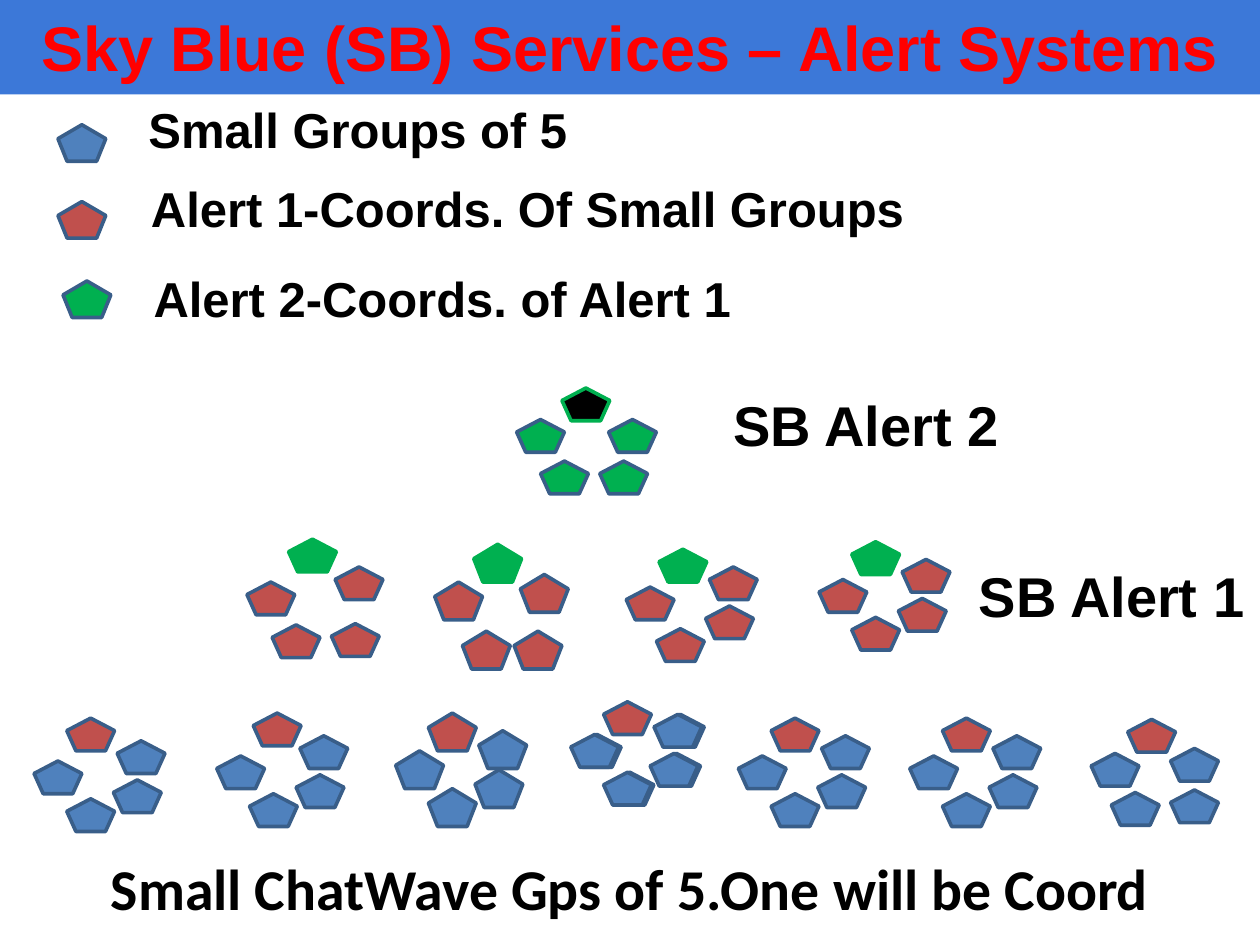
import pptx
import pptx.util
import pptx.dml.color
import pptx.enum.shapes
import pptx.enum.text

Inches = pptx.util.Inches
BLUE, RED, GREEN, BLACK = "4F81BD", "C0504D", "00B050", "000000"
EDGE, BAND, TITLE = "395E89", "3C78D8", "FF0000"
WIDE = 0.38
RING = [(-0.26, 0.3), (0.4, 0.14), (0, 0.6), (0.37, 0.45)]


def paint(color, code):
    """Set a solid colour from a hex string."""
    color.rgb = pptx.dml.color.RGBColor.from_string(code)


def style(frame, text, size, code, face="Arial", align=None):
    """Write one bold paragraph into a text frame."""
    frame.word_wrap = True
    para = frame.paragraphs[0]
    para.text = text
    para.alignment = align
    para.font.size = pptx.util.Pt(size)
    para.font.name = face
    para.font.bold = True
    paint(para.font.color, code)


def label(slide, box, text, size, **more):
    """Add a text box."""
    shape = slide.shapes.add_textbox(*map(Inches, box))
    style(shape.text_frame, text, size, BLACK, **more)


def member(slide, left, top, tall, fill, edge=EDGE):
    """Add one pentagon."""
    kind = pptx.enum.shapes.MSO_SHAPE.REGULAR_PENTAGON
    shape = slide.shapes.add_shape(
        kind, Inches(left), Inches(top), Inches(WIDE), Inches(tall))
    shape.shadow.inherit = False
    shape.fill.solid()
    paint(shape.fill.fore_color, fill)
    paint(shape.line.color, edge)
    shape.line.width = pptx.util.Pt(2.08)


def circle(slide, left, top, spots, fill, tall):
    """Place the members of a group around its leader's corner."""
    for right, down in spots:
        member(slide, left + right, top + down, tall, fill)


def team(slide, left, top, fills, spots=RING, tall=0.26, edge=EDGE):
    """Place a leader and the members around it."""
    member(slide, left, top, tall, fills[0], edge)
    circle(slide, left, top, spots, fills[1], tall)


def shift(right, down):
    """Return the ring of spots moved by an offset."""
    return [(x + right, y + down) for x, y in RING]


def header(slide, box):
    """Format the title as a full-width band."""
    title = slide.shapes.title
    title.left, title.top, title.width, title.height = map(Inches, box)
    title.fill.solid()
    paint(title.fill.fore_color, BAND)
    title.text_frame.vertical_anchor = pptx.enum.text.MSO_ANCHOR.MIDDLE
    style(title.text_frame, "Sky Blue (SB) Services – Alert Systems", 36,
          TITLE, align=pptx.enum.text.PP_ALIGN.CENTER)


def legend(slide, left, top):
    """Explain the three colours."""
    rows = [
        (0, 0.25, BLUE, 0.62, 0, 4.74, 0.66, "Small Groups of 5"),
        (0, 0.86, RED, 0.64, 0.63, 7.14, 0.59,
         "Alert 1-Coords. Of Small Groups"),
        (0.04, 1.49, GREEN, 0.66, 1.34, 5.11, 0.29,
         "Alert 2-Coords. of Alert 1"),
    ]
    for x, y, fill, right, down, wide, tall, text in rows:
        member(slide, left + x, top + y, 0.29, fill)
        label(slide, (left + right, top + down, wide, tall), text, 28)


def summit(slide, left, top):
    """Draw the Alert 2 level."""
    spots = [(-0.36, 0.25), (0.37, 0.25), (-0.17, 0.58), (0.3, 0.58)]
    team(slide, left, top, (BLACK, GREEN), spots, edge=GREEN)
    label(slide, (left + 1.26, top - 0.03, 2.52, 0.55), "SB Alert 2", 32)


def middle(slide, left, top):
    """Draw the Alert 1 level."""
    first = [(-0.33, 0.34), (0.37, 0.22), (-0.13, 0.68), (0.34, 0.67)]
    second = [(-0.31, 0.3), (0.37, 0.24), (-0.09, 0.69), (0.32, 0.69)]
    third = [(-0.26, 0.3), (0.4, 0.14), (-0.02, 0.63), (0.37, 0.45)]
    teams = [(0, 0, first, 0.26), (1.47, 0.04, second, 0.3),
             (2.94, 0.08, third, 0.26), (4.47, 0.02, RING, 0.26)]
    for right, down, spots, tall in teams:
        team(slide, left + right, top + down, (GREEN, RED), spots, tall, GREEN)
    label(slide, (left + 5.38, top + 0.13, 2.33, 0.53), "SB Alert 1", 32)


def base(slide, left, top):
    """Draw the small groups and their caption."""
    fourth = shift(0, -0.04)
    last = [(-0.29, 0.27), (0.34, 0.23), (-0.13, 0.58), (0.34, 0.56)]
    teams = [
        (0, 0.13, shift(0, 0.04), 0.26), (1.48, 0.09, shift(-0.03, 0.04), 0.26),
        (2.87, 0.09, RING, 0.3), (4.26, 0, fourth, 0.26),
        (5.59, 0.13, RING, 0.26), (6.95, 0.13, RING, 0.26),
        (8.42, 0.14, last, 0.26),
    ]
    circle(slide, left + 4.28, top, fourth, BLUE, 0.26)
    for right, down, spots, tall in teams:
        team(slide, left + right, top + down, (RED, BLUE), spots, tall)
    label(slide, (0, top + 1.15, 10, 0.57),
          "Small ChatWave Gps of 5.One will be Coord", 33, face="Calibri",
          align=pptx.enum.text.PP_ALIGN.CENTER)


def main():
    """Build and save the slide."""
    deck = pptx.Presentation()
    deck.slide_width, deck.slide_height = Inches(10), Inches(7.5)
    slide = deck.slides.add_slide(deck.slide_layouts[5])
    header(slide, (0, -0.02, 10, 0.77))
    legend(slide, 0.46, 0.74)
    summit(slide, 4.46, 3.08)
    middle(slide, 2.29, 4.28)
    base(slide, 0.53, 5.57)
    deck.save("out.pptx")


if __name__ == "__main__":
    main()
